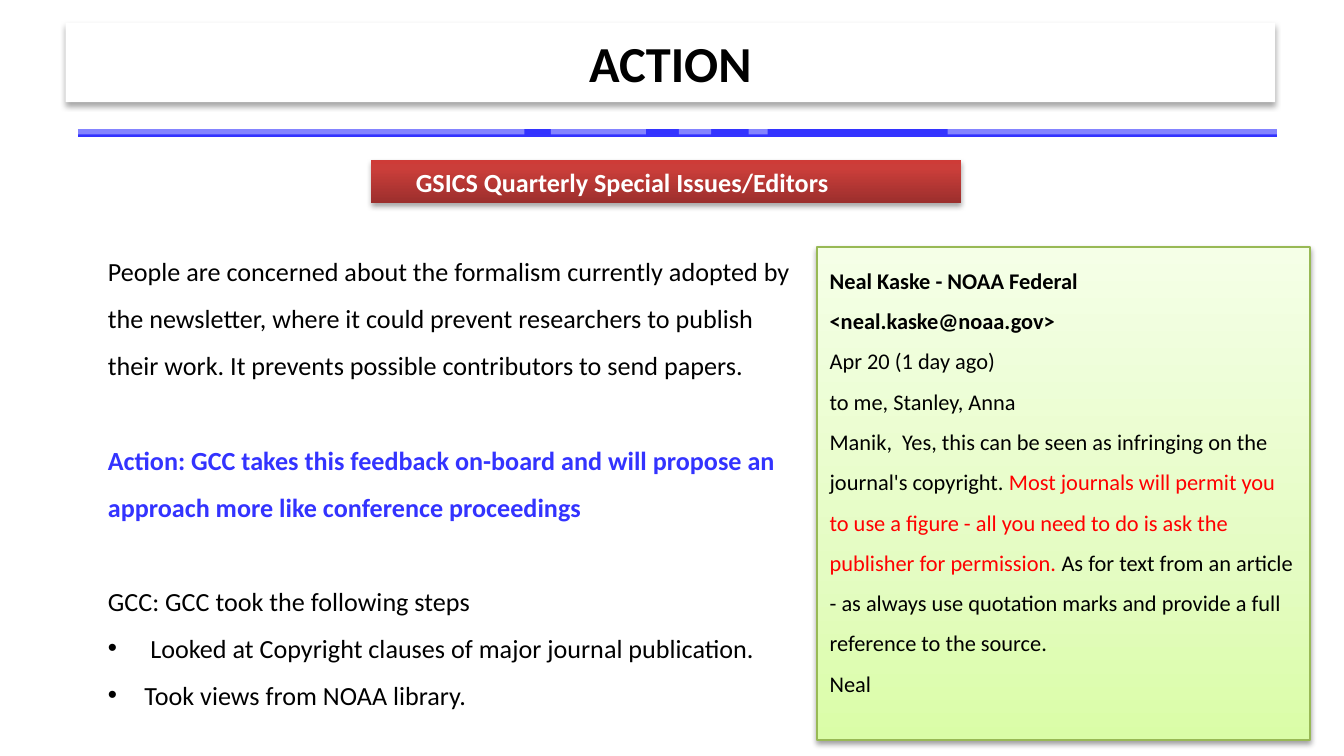
from dataclasses import dataclass

from lxml import etree
from pptx import Presentation
from pptx.dml.color import RGBColor
from pptx.enum.shapes import MSO_CONNECTOR, MSO_SHAPE
from pptx.enum.text import MSO_ANCHOR, PP_ALIGN
from pptx.oxml.ns import qn
from pptx.util import Cm, Pt

RECTANGLE = MSO_SHAPE.RECTANGLE
STRAIGHT = MSO_CONNECTOR.STRAIGHT
TOP, MIDDLE = MSO_ANCHOR.TOP, MSO_ANCHOR.MIDDLE
LEFT, CENTER = PP_ALIGN.LEFT, PP_ALIGN.CENTER
FONT = "Calibri"
BLACK, WHITE, RED, BLUE = "000000", "FFFFFF", "FF0000", "3333FF"


@dataclass(frozen=True)
class Area:
    left: float
    top: float
    width: float
    height: float


@dataclass(frozen=True)
class Span:
    text: str
    color: str = BLACK


@dataclass(frozen=True)
class Para:
    spans: tuple[Span, ...]
    size: float
    bold: bool = False
    line_spacing: float = 1.5
    space_before: float = 0
    indent: float = 0
    bullet: bool = False
    align: PP_ALIGN = LEFT


@dataclass(frozen=True)
class Shadow:
    opacity: int
    distance: float
    blur: float = 3.1


def rgb(color: str) -> RGBColor:
    return RGBColor.from_string(color)


def add_node(parent, tag: str, **attributes):
    node = etree.SubElement(parent, qn(tag))
    for name, value in attributes.items():
        node.set(name, str(value))
    return node


def add_color(parent, color: str, opacity: int):
    node = add_node(parent, "a:srgbClr", val=color)
    add_node(node, "a:alpha", val=opacity * 1000)


def add_panel(page, area: Area, color: str = WHITE, shadow: Shadow | None = None):
    panel = page.shapes.add_shape(
        RECTANGLE, Cm(area.left), Cm(area.top), Cm(area.width), Cm(area.height)
    )
    panel.fill.solid()
    panel.fill.fore_color.rgb = rgb(color)
    panel.line.fill.background()
    panel.shadow.inherit = False
    if shadow:
        effects = panel._element.spPr.find(qn("a:effectLst"))
        outer = add_node(
            effects, "a:outerShdw", blurRad=Pt(shadow.blur),
            dist=Pt(shadow.distance), dir=5400000, rotWithShape=0,
        )
        add_color(outer, BLACK, shadow.opacity)
    return panel


def set_gradient(panel, stops: dict[int, str]):
    panel.fill.gradient()
    panel.fill.gradient_angle = 90
    stop_list = panel._element.spPr.find(qn("a:gradFill")).find(qn("a:gsLst"))
    for stop in list(stop_list):
        stop_list.remove(stop)
    for position, color in stops.items():
        add_color(add_node(stop_list, "a:gs", pos=position * 1000), color, 100)


def write_text(box, paras: list[Para], anchor: MSO_ANCHOR = TOP):
    frame = box.text_frame
    frame.word_wrap = True
    frame.vertical_anchor = anchor
    frame.margin_left = frame.margin_right = Cm(0.24)
    frame.margin_top = frame.margin_bottom = Cm(0.12)
    for index, para in enumerate(paras):
        paragraph = frame.paragraphs[0] if index == 0 else frame.add_paragraph()
        paragraph.alignment = para.align
        paragraph.line_spacing = para.line_spacing
        paragraph.space_before = Pt(para.space_before)
        properties = paragraph._p.get_or_add_pPr()
        properties.set("marL", str(Cm(para.indent)))
        if para.bullet:
            properties.set("indent", str(-Cm(para.indent)))
            add_node(properties, "a:buFont", typeface="Arial")
            add_node(properties, "a:buChar", char="•")
        paragraph.font.name = FONT
        paragraph.font.size = Pt(para.size)
        paragraph.font.bold = para.bold
        for span in para.spans:
            run = paragraph.add_run()
            run.text = span.text
            run.font.color.rgb = rgb(span.color)


def add_divider(page):
    line = page.shapes.add_connector(STRAIGHT, Cm(1.47), Cm(2.51), Cm(24.13), Cm(2.51))
    line.line.color.rgb = rgb(BLUE)
    line.line.width = Pt(4.5)
    add_node(line._element.spPr, "a:effectLst")
    veils = [(0, 9.91), (10.41, 1.8), (12.83, 0.61), (14.15, 0.36), (17.91, 7.49)]
    for left, width in veils:
        veil = add_panel(page, Area(left, 2.26, width, 0.28))
        fill = veil._element.spPr.find(qn("a:solidFill"))
        add_node(fill[0], "a:alpha", val=40000)


def add_discussion(page):
    box = page.shapes.add_textbox(Cm(1.8), Cm(4.42), Cm(13.61), Cm(9.6))
    concern = (
        "People are concerned about the formalism currently adopted by the newsletter, "
        "where it could prevent researchers to publish their work. "
        "It prevents possible contributors to send papers."
    )
    action = (
        "Action: GCC takes this feedback on-board and will propose an approach "
        "more like conference proceedings"
    )
    steps = [" Looked at Copyright clauses of major journal publication.",
             "Took views from NOAA library."]
    write_text(box, [
        Para((Span(concern),), 14),
        Para((Span(action, BLUE),), 14, bold=True, space_before=25.2),
        Para((Span("GCC: GCC took the following steps"),), 14, space_before=25.2),
        *[Para((Span(step),), 14, indent=0.69, bullet=True) for step in steps],
    ])


def add_ribbon(page):
    ribbon = add_panel(page, Area(7.01, 3.02, 11.15, 0.81), shadow=Shadow(35, 1.8))
    set_gradient(ribbon, {0: "9C2F2D", 80: "CB3E3A", 100: "CE3B37"})
    heading = Span("GSICS Quarterly Special Issues/Editors", WHITE)
    write_text(ribbon, [Para((heading,), 14, bold=True, line_spacing=1, indent=0.61)])


def add_letter(page):
    letter = add_panel(page, Area(15.44, 4.67, 9.32, 9.32), shadow=Shadow(38, 1.6))
    set_gradient(letter, {0: "DAFDA7", 35: "E4FCC2", 100: "F5FFE7"})
    letter.line.color.rgb = rgb("98B955")
    letter.line.width = Pt(0.75)
    advice = (
        Span("Manik,  Yes, this can be seen as infringing on the journal's copyright. "),
        Span("Most journals will permit you to use a figure - all you need to do "
             "is ask the publisher for permission. ", RED),
        Span("As for text from an article - as always use quotation marks "
             "and provide a full reference to the source."),
    )
    write_text(letter, [
        Para((Span("Neal Kaske - NOAA Federal <neal.kaske@noaa.gov>"),), 12, bold=True),
        Para((Span("Apr 20 (1 day ago)"),), 12),
        Para((Span("to me, Stanley, Anna"),), 12),
        Para(advice, 12),
        Para((Span("Neal"),), 12),
    ])


def add_title(page):
    title = add_panel(page, Area(1.24, 0.43, 22.86, 1.5), shadow=Shadow(35, 1.8))
    heading = Para((Span("ACTION"),), 27, bold=True, line_spacing=1, align=CENTER)
    write_text(title, [heading], MIDDLE)


def main():
    deck = Presentation()
    deck.slide_width, deck.slide_height = Cm(25.4), Cm(14.29)
    page = deck.slides.add_slide(deck.slide_layouts[6])
    add_divider(page)
    add_discussion(page)
    add_ribbon(page)
    add_letter(page)
    add_title(page)
    deck.save("out.pptx")


if __name__ == "__main__":
    main()
